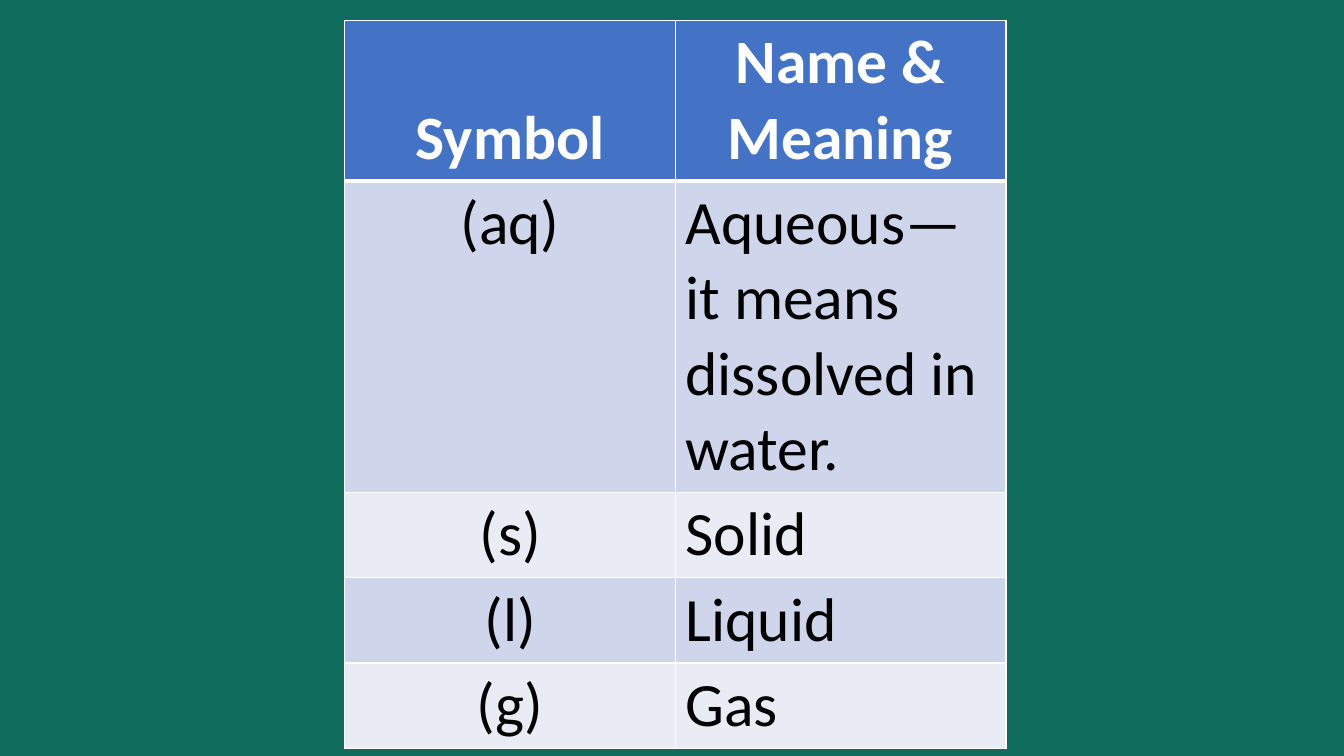
"""Build a slide with a table of chemical state symbols."""
from dataclasses import dataclass

from lxml import etree
from pptx import Presentation
from pptx.dml.color import RGBColor
from pptx.enum.text import MSO_ANCHOR, PP_ALIGN
from pptx.oxml.ns import qn
from pptx.util import Cm, Pt

CENTER, LEFT = PP_ALIGN.CENTER, PP_ALIGN.LEFT
TOP, BOTTOM = MSO_ANCHOR.TOP, MSO_ANCHOR.BOTTOM


@dataclass(frozen=True)
class Theme:
    """Colours, font and sizes of the slide."""
    background: str = "0F6B5C"
    header: str = "4472C4"
    bands: tuple = ("CFD5EA", "E9EBF5")
    border: str = "FFFFFF"
    header_text: str = "FFFFFF"
    body_text: str = "000000"
    font: str = "Calibri"
    size: int = 44
    thin: int = 1
    thick: int = 3


THEME = Theme()
STATES = (
    ("Symbol", "Name & Meaning"),
    ("(aq)", "Aqueous—it means dissolved in water."),
    ("(s)", "Solid"),
    ("(l)", "Liquid"),
    ("(g)", "Gas"),
)
ROW_HEIGHTS = (4.05, 7.82, 2.15, 2.15, 2.15)
COLUMN_WIDTH = 8.33


def paint_background(page):
    """Fill the page with the theme background."""
    fill = page.background.fill
    fill.solid()
    fill.fore_color.rgb = RGBColor.from_string(THEME.background)


def set_borders(cell, row):
    """Draw the cell borders, with a thick line under the header."""
    widths = {"lnL": THEME.thin, "lnR": THEME.thin,
              "lnT": THEME.thick if row == 1 else THEME.thin,
              "lnB": THEME.thick if row == 0 else THEME.thin}
    properties = cell._tc.get_or_add_tcPr()
    for side, width in widths.items():
        line = etree.SubElement(properties, qn(f"a:{side}"), w=str(Pt(width)))
        solid = etree.SubElement(line, qn("a:solidFill"))
        etree.SubElement(solid, qn("a:srgbClr"), val=THEME.border)


def style_cell(cell, row, column, text):
    """Write and format one table cell."""
    is_header = row == 0
    fill_color = THEME.header if is_header else THEME.bands[(row - 1) % 2]
    text_color = THEME.header_text if is_header else THEME.body_text
    set_borders(cell, row)
    cell.fill.solid()
    cell.fill.fore_color.rgb = RGBColor.from_string(fill_color)
    cell.vertical_anchor = BOTTOM if is_header else TOP
    cell.text = text
    para = cell.text_frame.paragraphs[0]
    para.alignment = CENTER if is_header or column == 0 else LEFT
    para.font.name = THEME.font
    para.font.size = Pt(THEME.size)
    para.font.bold = is_header
    para.font.color.rgb = RGBColor.from_string(text_color)


def add_state_table(page, left, top):
    """Add the table of state symbols."""
    column_count = len(STATES[0])
    table = page.shapes.add_table(
        len(STATES), column_count, Cm(left), Cm(top),
        Cm(COLUMN_WIDTH * column_count), Cm(sum(ROW_HEIGHTS))).table
    for column in table.columns:
        column.width = Cm(COLUMN_WIDTH)
    for row, (height, texts) in enumerate(zip(ROW_HEIGHTS, STATES)):
        table.rows[row].height = Cm(height)
        for column, text in enumerate(texts):
            style_cell(table.cell(row, column), row, column, text)


def main():
    """Build and save the deck."""
    deck = Presentation()
    deck.slide_width, deck.slide_height = Cm(33.87), Cm(19.05)
    page = deck.slides.add_slide(deck.slide_layouts[6])
    paint_background(page)
    add_state_table(page, left=8.69, top=0.51)
    deck.save("out.pptx")


if __name__ == "__main__":
    main()
